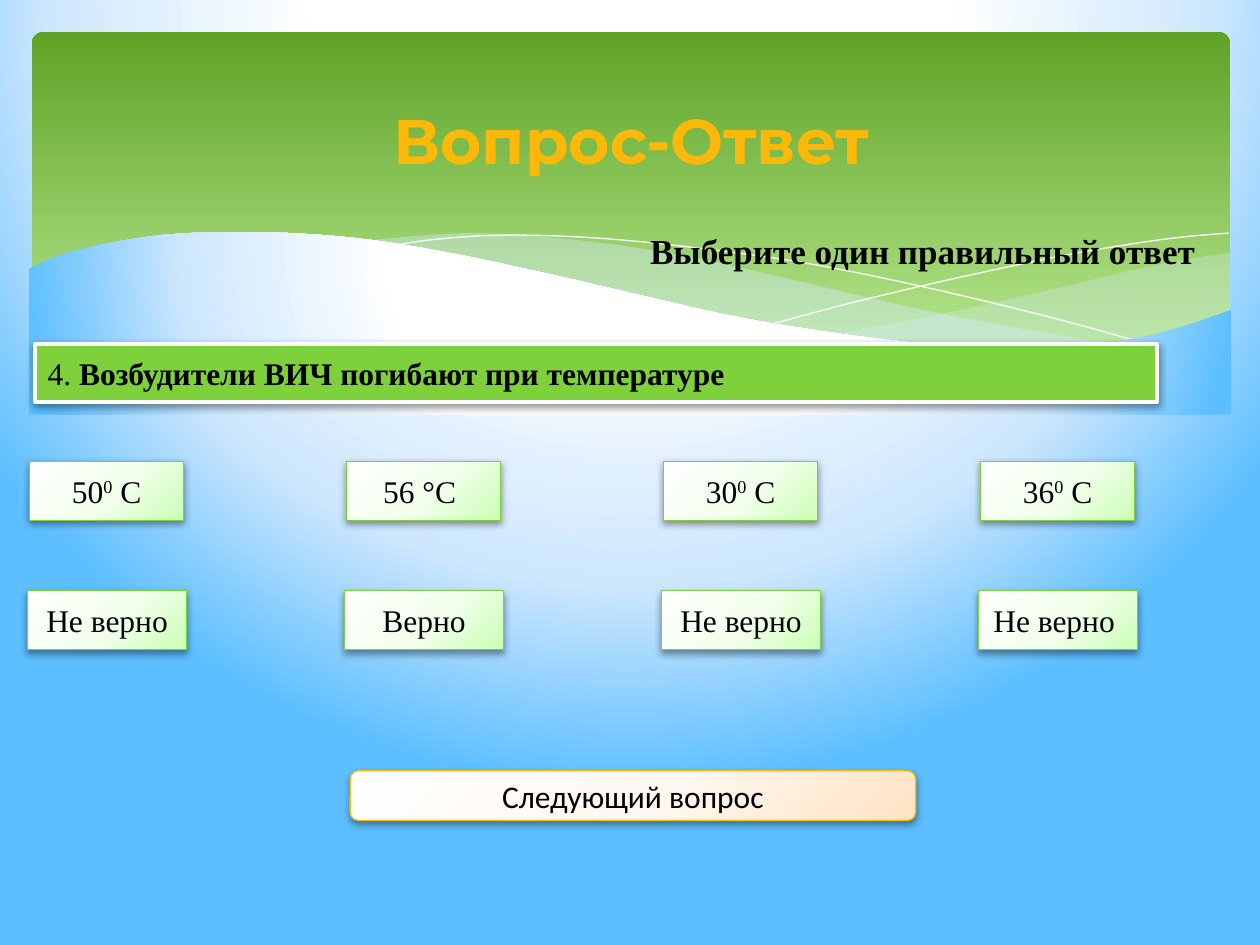
from dataclasses import dataclass
from pptx import Presentation, util as u
from pptx.dml.color import RGBColor
from pptx.enum import shapes, text
from pptx.oxml import ns, parse_xml


@dataclass(frozen=True)
class Theme:
    ink: str = "000000"
    white: str = "FFFFFF"
    gold: str = "FEB80A"
    green: str = "7FD13B"
    mist: str = "D6ECFF"
    sky: tuple = ((40, "FFFFFF"), (74, "CEE7FD"), (100, "5DBFFF"))
    grass: tuple = ((0, "5FA326"), (90, "B2E389"))
    mint: tuple = ((0, "FEFFFE"), (55, "F2FFED"), (100, "CAFFB4"))
    peach: tuple = ((0, "FFFEFE"), (55, "FFF8F1"), (100, "FFE3C4"))
    head: int = 36
    sub: int = 20
    body: int = 18
    serif: str = "Times New Roman"
    sans: str = "Calibri"
    show: str = "Montserrat"


T = Theme()
HALO = (20, -40, 20, 140)
CORNER = (-40, -90, 140, 190)
MID = text.MSO_ANCHOR.MIDDLE
CENTER = text.PP_ALIGN.CENTER
RECT = shapes.MSO_SHAPE.RECTANGLE
ROUND = shapes.MSO_SHAPE.ROUNDED_RECTANGLE

SWEEP = [
    [(24.16, 4.45), (23.11, 4.62), (22, 4.85), (20.5, 5.21), (18.49, 5.66), (16.15, 6.1)],
    [(16.15, 6.1), (17.27, 6.25), (18.59, 6.38), (19.76, 6.43), (21.06, 6.38),
     (22.35, 6.2), (23.29, 5.94), (24.16, 5.64)],
]
SWELL = [
    [(22.05, 6.3), (20.62, 6.1), (19.05, 5.82), (17.3, 5.46), (15.34, 5), (13.82, 4.65),
     (12.42, 4.39), (11.18, 4.22), (10.03, 4.11), (9.02, 4.06), (8.1, 4.09), (6.63, 4.22)],
    [(6.63, 4.22), (8.05, 4.42), (9.63, 4.72), (10.77, 5), (12.83, 5.46), (14.63, 5.84),
     (16.26, 6.12), (17.7, 6.32), (19, 6.4), (20.14, 6.43), (21.13, 6.4), (22.05, 6.3)],
]
FALL = [[(7.21, 4.32), (8.1, 4.19), (9.19, 4.11), (10.36, 4.11), (11.79, 4.19),
         (13.49, 4.37), (15.52, 4.65), (17.83, 5.11), (20.47, 5.74), (22.4, 6.27)]]
RISE = [[(14.94, 5.89), (16.43, 5.49), (18.36, 5.03), (20.6, 4.55), (22.1, 4.29),
         (23.19, 4.14), (24.13, 4.06)]]
FRONT = [
    [(24.18, 5.61), (23.24, 5.94), (22.2, 6.2), (20.95, 6.35), (19.91, 6.4), (18.69, 6.35),
     (17.35, 6.22), (15.82, 6.02), (14.07, 5.72), (12.14, 5.28), (10.72, 4.95),
     (8.64, 4.5), (6.78, 4.19), (5.21, 4.06), (3.86, 4.04), (2.72, 4.09), (1.78, 4.22),
     (1.07, 4.37), (0.53, 4.52), (-0.05, 4.78)],
    [(-0.05, 7.72), (24.18, 7.72)],
]


def style(item, **vals):
    for key, val in vals.items():
        setattr(item, key, val)


def rgb(code):
    return RGBColor.from_string(code)


def blend(fill, node, stops, rect=None, angle=90):
    fill.solid()
    marks = "".join(
        f'<a:gs pos="{pos * 1000}"><a:srgbClr val="{code}"/></a:gs>' for pos, code in stops)
    if rect:
        sides = " ".join(f'{side}="{val * 1000}"' for side, val in zip("ltrb", rect))
        mode = f'<a:path path="circle"><a:fillToRect {sides}/></a:path>'
    else:
        mode = f'<a:lin ang="{angle * 60000}" scaled="0"/>'
    grad = parse_xml(f'<a:gradFill {ns.nsdecls("a")} rotWithShape="1">'
                     f'<a:gsLst>{marks}</a:gsLst>{mode}</a:gradFill>')
    node.replace(node.find(ns.qn("a:solidFill")), grad)


def shade(shape):
    shape.shadow.inherit = False
    effect = shape._element.spPr.find(ns.qn("a:effectLst"))
    effect.append(parse_xml(
        f'<a:outerShdw {ns.nsdecls("a")} blurRad="{u.Pt(4.1)}" dist="{u.Pt(2)}" '
        f'dir="5400000" rotWithShape="0"><a:srgbClr val="{T.ink}">'
        f'<a:alpha val="40000"/></a:srgbClr></a:outerShdw>'))


def write(frame, runs, size, face, color=T.ink, align=None):
    para = frame.paragraphs[0]
    para.alignment = align
    for words, bold, base in runs:
        run = para.add_run()
        run.text = words
        style(run.font, size=u.Pt(size), name=face, bold=bold)
        run.font.color.rgb = rgb(color)
        if base:
            run._r.get_or_add_rPr().set("baseline", str(base * 1000))


def plain(words, bold=False):
    return [(words, bold, 0)]


def panel(slide, box, runs, edge, wide=0.75, stops=None, kind=RECT, face=T.serif, align=CENTER):
    shape = slide.shapes.add_shape(kind, *map(u.Cm, box))
    if stops:
        blend(shape.fill, shape._element.spPr, stops, CORNER)
    else:
        shape.fill.solid()
        shape.fill.fore_color.rgb = rgb(T.green)
    shape.line.color.rgb = rgb(edge)
    shape.line.width = u.Pt(wide)
    shade(shape)
    style(shape.text_frame, word_wrap=True, vertical_anchor=MID)
    write(shape.text_frame, runs, T.body, face, align=align)


def smooth(keys, steps=5):
    if len(keys) < 3:
        return keys
    ends = [keys[0], *keys, keys[-1]]
    dots = [keys[0]]
    for a, b, c, d in zip(ends, ends[1:], ends[2:], ends[3:]):
        for step in range(1, steps + 1):
            t = step / steps
            dots.append(tuple(
                (2 * q + (r - p) * t + (2 * p - 5 * q + 4 * r - s) * t ** 2
                 + (3 * q - p - 3 * r + s) * t ** 3) / 2
                for p, q, r, s in zip(a, b, c, d)))
    return dots


def wave(slide, box, parts, closed=True):
    dots = [(u.Cm(box[0] + x), u.Cm(box[1] + y)) for part in parts for x, y in smooth(part)]
    pen = slide.shapes.build_freeform(*dots[0])
    pen.add_line_segments(dots[1:], close=closed)
    shape = pen.convert_to_shape()
    shape.shadow.inherit = False
    if closed:
        shape.line.fill.background()
    else:
        shape.fill.background()
        shape.line.color.rgb = rgb(T.white)
        shape.line.width = 0
    return shape


def header(slide, box):
    band = slide.shapes.add_shape(ROUND, *map(u.Cm, box))
    band.adjustments[0] = 0.034
    band.shadow.inherit = False
    band.line.fill.background()
    blend(band.fill, band._element.spPr, T.grass)
    for parts, alpha in ((SWEEP, 29), (SWELL, 40)):
        fill = wave(slide, box, parts).fill
        fill.solid()
        fill.fore_color.rgb = rgb(T.mist)
        color = fill._xPr.find(".//" + ns.qn("a:srgbClr"))
        color.append(parse_xml(f'<a:alpha {ns.nsdecls("a")} val="{alpha * 1000}"/>'))
    for parts in (FALL, RISE):
        wave(slide, box, parts, closed=False)
    front = wave(slide, box, FRONT)
    blend(front.fill, front._element.spPr, T.sky, HALO)


def titles(slide, box):
    left, top, wide, high = box
    title = slide.shapes.title
    slide.shapes._spTree.append(title._element)
    style(title, left=u.Cm(left), top=u.Cm(top), width=u.Cm(wide), height=u.Cm(high))
    title.text_frame.vertical_anchor = MID
    write(title.text_frame, plain("Вопрос-Ответ", True), T.head, T.show, T.gold, CENTER)
    hint = slide.shapes.add_textbox(*map(u.Cm, (left + 11.38, top + 2.98, 11.99, 1.11)))
    style(hint.text_frame, word_wrap=True, auto_size=text.MSO_AUTO_SIZE.SHAPE_TO_FIT_TEXT)
    write(hint.text_frame, plain(" Выберите один правильный ответ", True), T.sub, T.serif)


def row(slide, box, cells, pitch=6.39):
    left, *rest = box
    for col, runs in enumerate(cells):
        panel(slide, (left + col * pitch, *rest), runs, T.green, stops=T.mint)


def degrees(num):
    return [(num, False, 0), ("0", False, 30), (" С", False, 0)]


def main():
    deck = Presentation()
    style(deck, slide_width=u.Cm(25.4), slide_height=u.Cm(19.05))
    slide = deck.slides.add_slide(deck.slide_layouts[5])
    back = slide.background.fill
    back.solid()
    blend(back, slide._element.find(".//" + ns.qn("p:bgPr")), T.sky, HALO)
    header(slide, (0.64, 0.64, 24.16, 6.86))
    titles(slide, (1.3, 1.52, 22.86, 2.59))
    panel(slide, (0.71, 6.93, 22.61, 1.17),
          plain("4. ") + plain("Возбудители ВИЧ погибают при температуре", True),
          T.white, wide=2.5, align=None)
    row(slide, (0.6, 9.3, 3.1, 1.19),
        [degrees("50"), plain("56 °С "), degrees("30"), degrees("36")])
    row(slide, (0.56, 11.91, 3.2, 1.19),
        map(plain, ("Не верно", "Верно", "Не верно", "Не верно ")))
    panel(slide, (7.06, 15.54, 11.4, 1), plain("Следующий вопрос"), T.gold,
          stops=T.peach, kind=ROUND, face=T.sans)
    deck.save("out.pptx")


if __name__ == "__main__":
    main()
